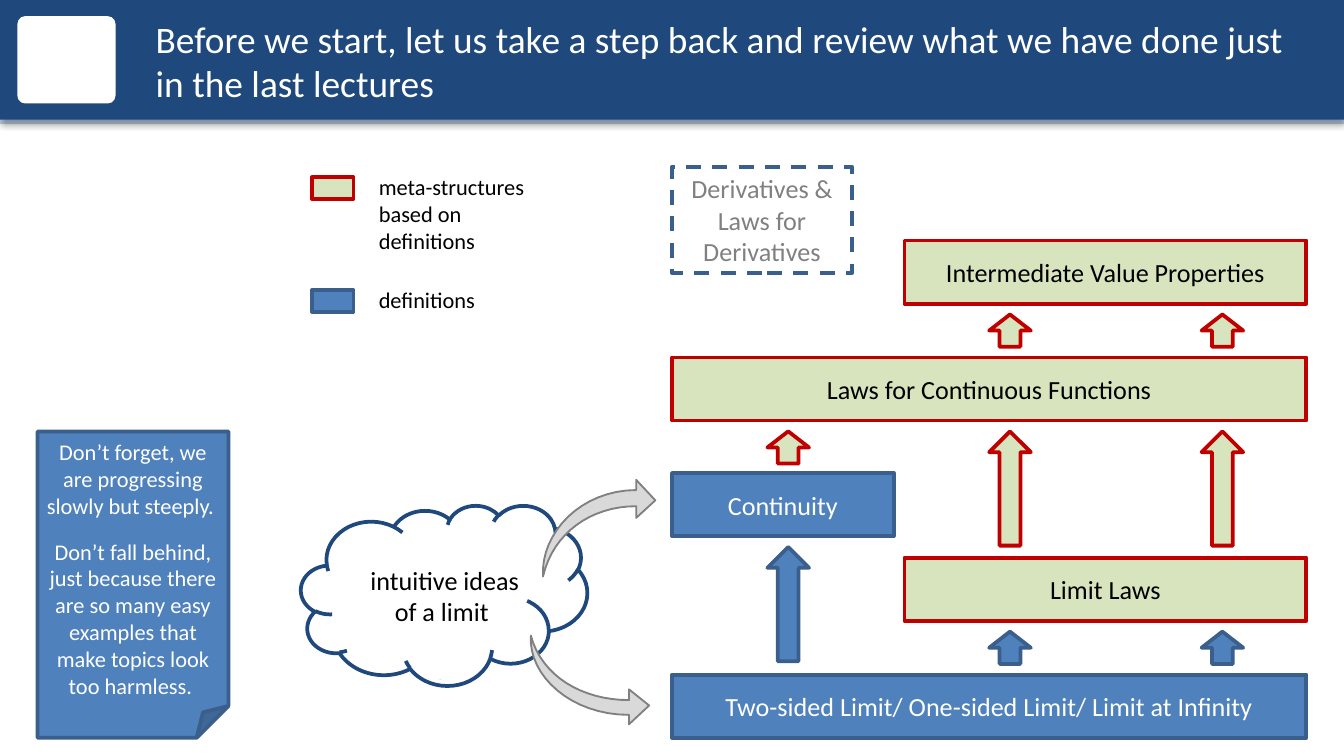
from dataclasses import dataclass
from typing import Optional

from lxml import etree
from pptx import Presentation
from pptx.dml.color import RGBColor
from pptx.enum import dml, shapes, text
from pptx.oxml.ns import qn
from pptx.util import Inches, Pt


@dataclass(frozen=True)
class Theme:
    font: str = "Calibri"
    head: int = 20
    body: int = 14
    small: int = 12
    white: str = "FFFFFF"
    black: str = "000000"
    navy: str = "1F497D"
    pale: str = "C6D9F1"
    gray: str = "808080"
    light: str = "D9D9D9"
    blue: str = "4F81BD"
    edge: str = "3A5F8C"
    green: str = "D7E4BD"
    red: str = "C00000"


@dataclass(frozen=True)
class Look:
    fill: Optional[str]
    line: Optional[str]
    ink: str = Theme.black
    width: float = 2
    dash: bool = False


@dataclass(frozen=True)
class Box:
    left: float
    top: float
    width: float
    words: str
    look: Look
    height: float = 0.47


@dataclass(frozen=True)
class Arrow:
    left: float
    top: float
    height: float
    look: Look


@dataclass(frozen=True)
class Key:
    top: float
    look: Look
    lines: tuple[str, ...]
    width: float
    height: float


T = Theme()
KIND = shapes.MSO_SHAPE
MIDDLE = text.MSO_ANCHOR.MIDDLE
CENTER = text.PP_ALIGN.CENTER

BASE = Look(T.blue, T.edge, T.white)
META = Look(T.green, T.red)
NEXT = Look(None, T.edge, T.gray, dash=True)
BAND = Look(T.navy, None)
PLAIN = Look(T.white, None)
CLOUD = Look(T.white, T.navy)
PATCH = Look(T.white, T.white)
SWEEP = Look(T.light, T.gray, width=1)

LEFT, INNER, RIGHT = 5, 6.73, 9.72
FULL, PART = RIGHT - LEFT, RIGHT - INNER
COLS = (5.71, 7.36, 8.94)
SHORT, TALL = 0.24, 0.85

BOXES = (
    Box(LEFT, 5.02, FULL, "Two-sided Limit/ One-sided Limit/ Limit at Infinity", BASE),
    Box(INNER, 4.15, PART, "Limit Laws", META),
    Box(LEFT, 3.52, 1.65, "Continuity", BASE),
    Box(LEFT, 2.66, FULL, "Laws for Continuous Functions", META),
    Box(INNER, 1.79, PART, "Intermediate Value Properties", META),
    Box(LEFT, 1.24, 1.34, "Derivatives & Laws for Derivatives", NEXT, 0.79),
)
ARROWS = (
    Arrow(COLS[0], 4.07, TALL, BASE),
    Arrow(COLS[0], 3.21, SHORT, META),
    *(Arrow(col, top, height, look)
      for col in COLS[1:]
      for top, height, look in ((4.7, SHORT, BASE), (3.21, TALL, META), (2.34, SHORT, META))),
)
KEYS = (
    Key(1.32, META, ("meta-structures", "based on", "definitions"), 1.29, 0.71),
    Key(2.16, BASE, ("definitions",), 0.93, 0.3),
)
NOTE = (
    "Don’t forget, we are progressing slowly but steeply. ",
    "Don’t fall behind, just because there are so many easy examples that make topics look too harmless. ",
)


def color(code: str) -> RGBColor:
    return RGBColor.from_string(code)


def paint(shape, look: Look) -> None:
    shape.shadow.inherit = False
    if look.fill:
        shape.fill.solid()
        shape.fill.fore_color.rgb = color(look.fill)
    else:
        shape.fill.background()
    if look.line:
        shape.line.color.rgb = color(look.line)
        shape.line.width = Pt(look.width)
        if look.dash:
            shape.line.dash_style = dml.MSO_LINE.DASH
    else:
        shape.line.fill.background()


def write(shape, *lines: str, size: int = T.body, ink: str = T.black,
          align=None, anchor=None, wrap: bool = True, gap: float = 0,
          inset: Optional[float] = None) -> None:
    frame = shape.text_frame
    frame.word_wrap = wrap
    if anchor is not None:
        frame.vertical_anchor = anchor
    if inset is not None:
        frame.margin_left = frame.margin_right = Inches(inset)
        frame.margin_top = frame.margin_bottom = Inches(inset)
    for i, line in enumerate(lines):
        para = frame.add_paragraph() if i else frame.paragraphs[0]
        para.text = line
        para.alignment = align
        if i and gap:
            para.space_before = Pt(gap)
        para.font.name = T.font
        para.font.size = Pt(size)
        para.font.color.rgb = color(ink)


def draw(slide, kind, left: float, top: float, width: float, height: float, look: Look):
    shape = slide.shapes.add_shape(kind, Inches(left), Inches(top), Inches(width), Inches(height))
    paint(shape, look)
    return shape


def label(slide, left: float, top: float, width: float, height: float, *lines: str, **style) -> None:
    box = slide.shapes.add_textbox(Inches(left), Inches(top), Inches(width), Inches(height))
    write(box, *lines, **style)


def curve(*knots: tuple[float, float], steps: int = 16) -> list[tuple[float, float]]:
    """Sample a cubic Bezier given by four points."""
    def at(t: float, axis: int) -> float:
        a, b, c, d = (knot[axis] for knot in knots)
        s = 1 - t
        return a * s**3 + 3 * b * s * s * t + 3 * c * s * t * t + d * t**3
    return [(at(i / steps, 0), at(i / steps, 1)) for i in range(steps + 1)]


def sweep(slide, left: float, top: float, wide: float = 1, tall: float = 1) -> None:
    """Draw a curved arrow from its tail; a negative tall makes it rise."""
    near = curve((0, 0), (0.08, 0.3), (0.38, 0.48), (0.73, 0.48))
    tip = [(0.73, 0.4), (0.88, 0.52), (0.73, 0.66)]
    far = curve((0.73, 0.59), (0.3, 0.59), (-0.02, 0.3), (0, 0))
    points = [(Inches(left + x * wide), Inches(top + y * tall)) for x, y in near + tip + far]
    form = slide.shapes.build_freeform(*points[0])
    form.add_line_segments(points[1:-1], close=True)
    paint(form.convert_to_shape(), SWEEP)


def header(slide) -> None:
    rule = slide.shapes.add_connector(
        shapes.MSO_CONNECTOR.STRAIGHT, Inches(0), Inches(0.9), Inches(10), Inches(0.9))
    rule.line.color.rgb = color(T.pale)
    rule.line.width = Pt(3)
    etree.SubElement(rule._element.spPr, qn("a:effectLst"))

    band = draw(slide, KIND.RECTANGLE, 0, 0, 10, 0.89, BAND)
    glow = etree.SubElement(
        band._element.spPr.find(qn("a:effectLst")), qn("a:outerShdw"),
        blurRad=str(Pt(3.5)), dist=str(Pt(2.2)), dir="5400000", rotWithShape="0")
    tint = etree.SubElement(glow, qn("a:srgbClr"), val=T.black)
    etree.SubElement(tint, qn("a:alpha"), val="32000")

    badge = draw(slide, KIND.ROUNDED_RECTANGLE, 0.13, 0.12, 0.73, 0.65, PLAIN)
    badge.adjustments[0] = 0.09
    label(slide, 1.06, 0.06, 8.82, 0.78,
          "Before we start, let us take a step back and review what we have done just in the last lectures",
          size=T.head, ink=T.white, anchor=MIDDLE)


def cloud(slide) -> None:
    puff = draw(slide, KIND.CLOUD_CALLOUT, 2.24, 3.76, 2.13, 1.34, CLOUD)
    puff.adjustments[0], puff.adjustments[1] = 0, 0.07
    draw(slide, KIND.OVAL, 3.06, 4.42, 0.55, 0.63, PATCH)
    label(slide, 2.56, 4.15, 1.5, 0.57, "intuitive ideas of a limit ", align=CENTER)


def main() -> None:
    deck = Presentation()
    deck.slide_width = Inches(10)
    deck.slide_height = deck.slide_width * 9 // 16
    slide = deck.slides.add_slide(deck.slide_layouts[6])
    header(slide)
    note = draw(slide, KIND.FOLDED_CORNER, 0.28, 3.21, 1.42, 2.28, BASE)
    write(note, *NOTE, size=T.small, ink=BASE.ink, align=CENTER, anchor=MIDDLE, gap=10, inset=0.04)
    cloud(slide)
    for box in BOXES:
        shape = draw(slide, KIND.RECTANGLE, box.left, box.top, box.width, box.height, box.look)
        write(shape, box.words, ink=box.look.ink, align=CENTER, anchor=MIDDLE)
    for arrow in ARROWS:
        draw(slide, KIND.UP_ARROW, arrow.left, arrow.top, 0.31, arrow.height, arrow.look)
    for key in KEYS:
        draw(slide, KIND.RECTANGLE, 2.32, key.top, 0.31, 0.16, key.look)
        label(slide, 2.72, key.top - 0.08, key.width, key.height, *key.lines,
              size=T.small, wrap=False)
    sweep(slide, 3.95, 4.73)
    sweep(slide, 4.04, 4.29, 0.95, -1.09)
    deck.save("out.pptx")


if __name__ == "__main__":
    main()
